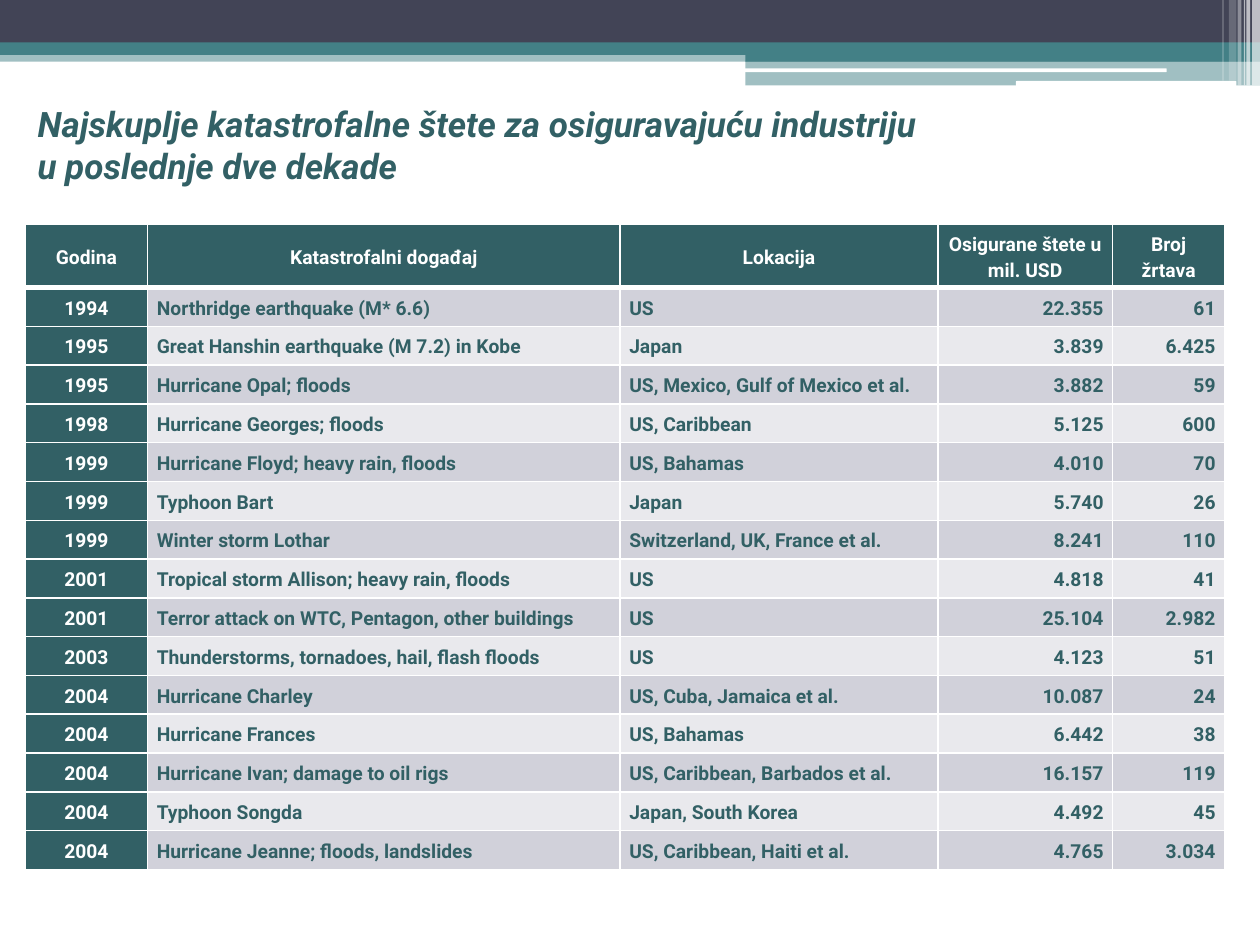
"""Build a slide tabulating the costliest insured catastrophes."""
import dataclasses
import typing

import lxml.etree
import pptx
import pptx.dml.color
import pptx.enum.shapes
import pptx.enum.text
import pptx.oxml
import pptx.oxml.ns
import pptx.util

Pt = pptx.util.Pt
RGB = pptx.dml.color.RGBColor.from_string
ALIGN = pptx.enum.text.PP_ALIGN
MIDDLE = pptx.enum.text.MSO_ANCHOR.MIDDLE
RECT = pptx.enum.shapes.MSO_SHAPE.RECTANGLE
ROUNDED = pptx.enum.shapes.MSO_SHAPE.ROUNDED_RECTANGLE


@dataclasses.dataclass(frozen=True)
class Theme:
    font: str = "Roboto"
    title_size: float = 20
    table_size: float = 11
    ink: str = "326065"
    navy: str = "424456"
    teal: str = "438086"
    white: str = "FFFFFF"
    bands: tuple[str, str] = ("D1D1DA", "E9E9ED")


THEME = Theme()


class Bar(typing.NamedTuple):
    left: float
    top: float
    width: float
    height: float
    color: str
    opacity: int = 100
    preset: typing.Any = RECT


class Column(typing.NamedTuple):
    heading: str
    width: float
    align: typing.Any


class Catastrophe(typing.NamedTuple):
    year: str
    event: str
    location: str
    insured_loss: str
    victims: str


BANNER = [
    Bar(0, 28.8, 720, 6.5, THEME.teal, 50),
    Bar(0, 0, 720, 24.5, THEME.navy),
    Bar(0, 24.2, 720, 7.2, THEME.teal),
    Bar(426, 28.1, 294, 7.2, THEME.teal),
    Bar(426, 34.6, 294, 14.2, THEME.teal, 50),
    Bar(425.5, 39.1, 241.2, 2.2, THEME.white, preset=ROUNDED),
    Bar(580.5, 46.3, 126, 2.9, THEME.white, preset=ROUNDED),
    Bar(715.5, 0, 4.5, 48.8, THEME.white, 65),
    Bar(712.2, 0, 2.2, 48.8, THEME.white, 65),
    Bar(710.8, 0, 0.72, 48.8, THEME.white, 60),
    Bar(707.2, 0, 2.2, 48.8, THEME.white, 40),
    Bar(702.2, 0, 4.3, 46.1, THEME.white, 20),
    Bar(698.5, 0, 0.72, 46.1, THEME.white, 30),
]

TITLE_LINES = ["Najskuplje katastrofalne štete za osiguravajuću industriju ", "u poslednje dve dekade"]

COLUMNS = [
    Column("Godina", 70, ALIGN.CENTER),
    Column("Katastrofalni događaj", 270, ALIGN.LEFT),
    Column("Lokacija", 181.5, ALIGN.LEFT),
    Column("Osigurane štete u mil. USD", 100, ALIGN.RIGHT),
    Column("Broj žrtava", 64, ALIGN.RIGHT),
]
HEADER_HEIGHT, ROW_HEIGHT = 36, 22.17

CATASTROPHES = [
    Catastrophe("1994", "Northridge earthquake (M* 6.6)", "US", "22.355", "61"),
    Catastrophe("1995", "Great Hanshin earthquake (M 7.2) in Kobe", "Japan", "3.839", "6.425"),
    Catastrophe("1995", "Hurricane Opal; floods", "US, Mexico, Gulf of Mexico et al.", "3.882", "59"),
    Catastrophe("1998", "Hurricane Georges; floods", "US, Caribbean", "5.125", "600"),
    Catastrophe("1999", "Hurricane Floyd; heavy rain, floods", "US, Bahamas", "4.010", "70"),
    Catastrophe("1999", "Typhoon Bart", "Japan", "5.740", "26"),
    Catastrophe("1999", "Winter storm Lothar", "Switzerland, UK, France et al.", "8.241", "110"),
    Catastrophe("2001", "Tropical storm Allison; heavy rain, floods", "US", "4.818", "41"),
    Catastrophe("2001", "Terror attack on WTC, Pentagon, other buildings", "US", "25.104", "2.982"),
    Catastrophe("2003", "Thunderstorms, tornadoes, hail, flash floods", "US", "4.123", "51"),
    Catastrophe("2004", "Hurricane Charley", "US, Cuba, Jamaica et al.", "10.087", "24"),
    Catastrophe("2004", "Hurricane Frances", "US, Bahamas", "6.442", "38"),
    Catastrophe("2004", "Hurricane Ivan; damage to oil rigs", "US, Caribbean, Barbados et al.", "16.157", "119"),
    Catastrophe("2004", "Typhoon Songda", "Japan, South Korea", "4.492", "45"),
    Catastrophe("2004", "Hurricane Jeanne; floods, landslides", "US, Caribbean, Haiti et al.", "4.765", "3.034"),
]


def apply(target: typing.Any, **values: typing.Any) -> None:
    for name, value in values.items():
        setattr(target, name, value)


def add_child(parent: typing.Any, tag: str, **attributes: str) -> typing.Any:
    return lxml.etree.SubElement(parent, pptx.oxml.ns.qn(tag), attributes)


def style_font(font: typing.Any, size: float, color: str, italic: bool = False) -> None:
    apply(font, name=THEME.font, size=Pt(size), bold=True, italic=italic)
    font.color.rgb = RGB(color)


def draw_bar(slide: typing.Any, bar: Bar) -> None:
    shape = slide.shapes.add_shape(bar.preset, *map(Pt, bar[:4]))
    shape.shadow.inherit = False
    shape.line.fill.background()
    shape.fill.solid()
    shape.fill.fore_color.rgb = RGB(bar.color)
    if bar.opacity < 100:
        color = shape.fill._xPr.find(".//" + pptx.oxml.ns.qn("a:srgbClr"))
        add_child(color, "a:alpha", val=str(bar.opacity * 1000))


def draw_title(slide: typing.Any) -> None:
    frame = slide.shapes.add_textbox(Pt(14.4), Pt(49), Pt(686), Pt(67.7)).text_frame
    apply(frame, word_wrap=True, vertical_anchor=MIDDLE)
    paragraph = frame.paragraphs[0]
    for index, line in enumerate(TITLE_LINES):
        if index:
            paragraph.add_line_break()
        run = paragraph.add_run()
        run.text = line
        style_font(run.font, THEME.title_size, THEME.ink, italic=True)


def draw_borders(cell: typing.Any, header: bool) -> None:
    widths = {"a:lnL": 1, "a:lnR": 1, "a:lnT": 1, "a:lnB": 3 if header else 1}
    if not header:
        del widths["a:lnT"]
    for tag, width in widths.items():
        line = add_child(cell._tc.get_or_add_tcPr(), tag, w=str(Pt(width)))
        add_child(add_child(line, "a:solidFill"), "a:srgbClr", val=THEME.white)


def fill_cell(cell: typing.Any, text: str, align: typing.Any, fill: str, header: bool) -> None:
    apply(cell, text=text, vertical_anchor=MIDDLE, margin_left=Pt(5.2), margin_right=Pt(5.2),
          margin_top=0, margin_bottom=0)
    draw_borders(cell, header)
    cell.fill.solid()
    cell.fill.fore_color.rgb = RGB(fill)
    paragraph = cell.text_frame.paragraphs[0]
    apply(paragraph, alignment=align, line_spacing=1.15)
    color = THEME.white if fill == THEME.ink else THEME.ink
    style_font(paragraph.runs[0].font, THEME.table_size, color)


def draw_table(slide: typing.Any) -> None:
    width = sum(column.width for column in COLUMNS)
    height = HEADER_HEIGHT + ROW_HEIGHT * len(CATASTROPHES)
    table = slide.shapes.add_table(len(CATASTROPHES) + 1, len(COLUMNS), Pt(14.4), Pt(128.3),
                                   Pt(width), Pt(height)).table
    records = [[column.heading for column in COLUMNS], *CATASTROPHES]
    for row, record in enumerate(records):
        header = row == 0
        table.rows[row].height = Pt(HEADER_HEIGHT if header else ROW_HEIGHT)
        for index, (text, column) in enumerate(zip(record, COLUMNS)):
            fill = THEME.ink if header or index == 0 else THEME.bands[(row - 1) % 2]
            align = ALIGN.CENTER if header else column.align
            fill_cell(table.cell(row, index), text, align, fill, header)
    for table_column, column in zip(table.columns, COLUMNS):
        table_column.width = Pt(column.width)


def main() -> None:
    deck = pptx.Presentation()
    apply(deck, slide_width=Pt(720), slide_height=Pt(540))
    slide = deck.slides.add_slide(deck.slide_layouts[6])
    for bar in BANNER:
        draw_bar(slide, bar)
    draw_table(slide)
    draw_title(slide)
    deck.save("out.pptx")


if __name__ == "__main__":
    main()
